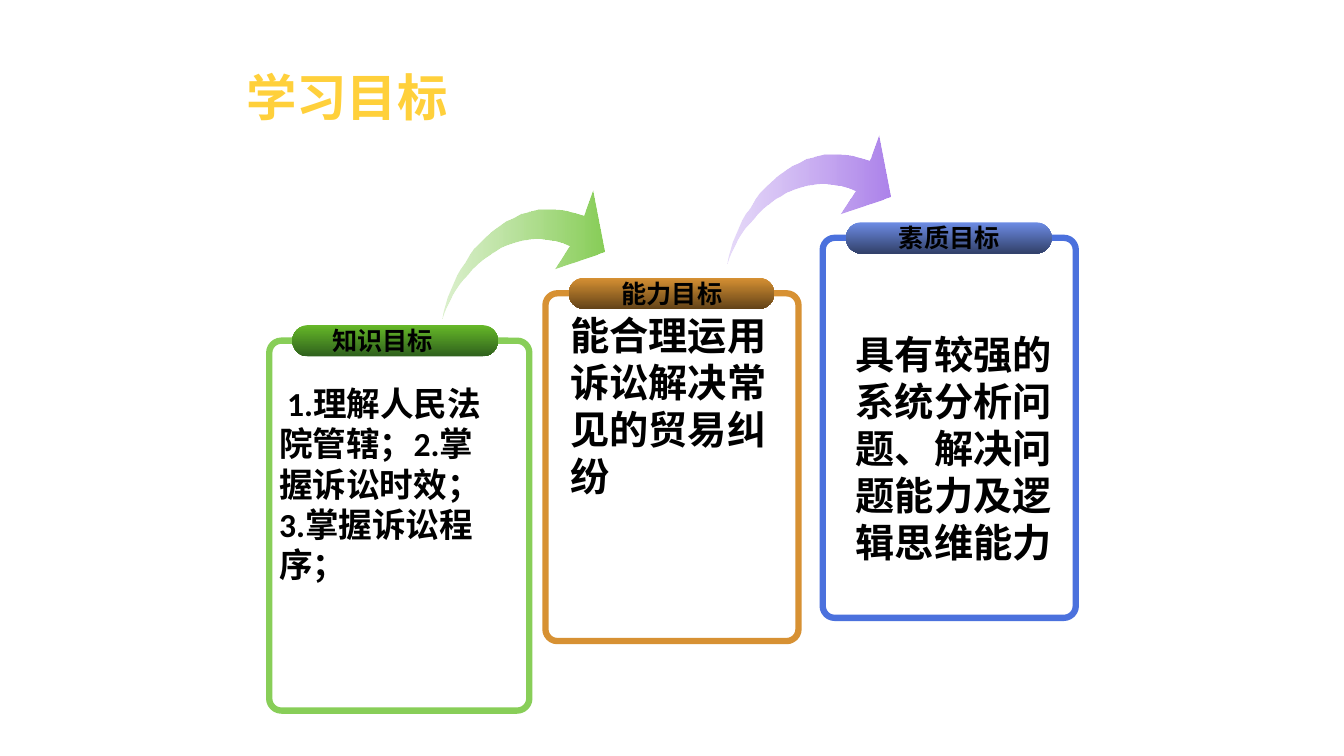
from collections import namedtuple

from lxml import etree
from pptx import Presentation
from pptx.dml.color import RGBColor
from pptx.enum import shapes, text
from pptx.oxml import ns
from pptx.util import Inches, Pt


def gradient(sp, start, end, angle):
    sp.shadow.inherit = False
    sp.line.fill.background()
    sp.fill.gradient()
    sp.fill.gradient_angle = angle
    for stop, color, position in zip(sp.fill.gradient_stops, (start, end), (0, 1)):
        stop.color.rgb = RGBColor.from_string(color)
        stop.position = position


def write(tf, words, size, color="000000", font="Calibri"):
    """Fill tf with one bold paragraph and return that paragraph."""
    tf.text = words
    p = tf.paragraphs[0]
    p.font.size, p.font.bold, p.font.name = Pt(size), True, font
    p.font.color.rgb = RGBColor.from_string(color)
    ea = etree.SubElement(p._p.pPr.find(ns.qn("a:defRPr")), ns.qn("a:ea"))
    ea.set("typeface", "Noto Sans CJK SC")
    return p


prs = Presentation()
prs.slide_width, prs.slide_height = Inches(13.33), Inches(7.5)
s = prs.slides.add_slide(prs.slide_layouts[5])

# Title
title = s.shapes.title
title.left, title.top = Inches(2.34), Inches(0.64)
title.width, title.height = Inches(8.66), Inches(0.71)
title.text_frame.vertical_anchor = text.MSO_ANCHOR.MIDDLE
p = write(title.text_frame, "学习目标", 36, "FFD03B", "Noto Sans CJK SC")
p.alignment = text.PP_ALIGN.LEFT
p.line_spacing = 0.9

# Cards: a frame, a pill on its top edge, a heading on the pill, a body inside.
# label_dx, body_dx and body_dy are measured from the frame's top left corner.
Card = namedtuple("Card", "heading x y width height color shades label_dx "
                          "body_dx body_dy body_height size indent body")
cards = [
    Card("知识目标", 2.67, 3.38, 2.58, 3.67, "88CE58", ("66B828", "2F611D"), 0.52,
         0, 0.37, 2.12, 24, 0.08, "1.理解人民法院管辖；2.掌握诉讼时效；3.掌握诉讼程序；"),
    Card("能力目标", 5.41, 2.91, 2.51, 3.45, "D79133", ("D79133", "634318"), 0.65,
         0.15, 0.13, 1.99, 28, 0, "能合理运用诉讼解决常见的贸易纠纷"),
    Card("素质目标", 8.16, 2.36, 2.51, 3.77, "4B71DD", ("6D8CE5", "32416A"), 0.65,
         0.23, 0.87, 2.9, 28, 0, "具有较强的系统分析问题、解决问题能力及逻辑思维能力"),
]
PILL_WIDTH, PILL_HEIGHT, PILL_DX = 2.04, 0.31, 0.23
LABEL_WIDTH, LABEL_HEIGHT = 1.21, 0.4
BODY_WIDTH = 2.27

for card in cards:
    frame = s.shapes.add_shape(shapes.MSO_SHAPE.ROUNDED_RECTANGLE, Inches(card.x),
                               Inches(card.y), Inches(card.width), Inches(card.height))
    frame.adjustments[0] = 0.047
    frame.shadow.inherit = False
    frame.fill.background()
    frame.line.color.rgb = RGBColor.from_string(card.color)
    frame.line.width = Pt(4.5)

    # Pill and heading are both centred on the frame's top edge
    pill = s.shapes.add_shape(shapes.MSO_SHAPE.ROUNDED_RECTANGLE, Inches(card.x + PILL_DX),
                              Inches(card.y - PILL_HEIGHT / 2),
                              Inches(PILL_WIDTH), Inches(PILL_HEIGHT))
    pill.adjustments[0] = 0.5
    gradient(pill, *card.shades, 270)

    label = s.shapes.add_textbox(Inches(card.x + card.label_dx),
                                 Inches(card.y - LABEL_HEIGHT / 2),
                                 Inches(LABEL_WIDTH), Inches(LABEL_HEIGHT))
    label.text_frame.word_wrap = False
    write(label.text_frame, card.heading, 18).alignment = text.PP_ALIGN.CENTER

    body = s.shapes.add_textbox(Inches(card.x + card.body_dx), Inches(card.y + card.body_dy),
                                Inches(BODY_WIDTH), Inches(card.body_height))
    body.text_frame.word_wrap = True
    p = write(body.text_frame, card.body, card.size)
    p._p.pPr.set("indent", str(Inches(card.indent)))

# Arrow: two cubic Bezier edges leave the tail and end at the head's three corners.
# Points are hundredths of an inch from the tail, with y pointing down.
TAIL = (0, 0)
INNER_EDGE = [TAIL, (12, -45), (70, -98), (126, -72)]
OUTER_EDGE = [TAIL, (8, -52), (62, -132), (140, -102)]
HEAD = [(111, -49), (161, -66), (149, -127)]
STEPS = 24

edges = []
for controls in (INNER_EDGE, OUTER_EDGE):
    edge = []
    for step in range(STEPS + 1):
        t = step / STEPS
        weights = ((1 - t) ** 3, 3 * t * (1 - t) ** 2, 3 * t ** 2 * (1 - t), t ** 3)
        edge.append([sum(w * c for w, c in zip(weights, axis)) for axis in zip(*controls)])
    edges.append(edge)
inner, outer = edges
outline = inner + HEAD + outer[:0:-1]  # out along one edge, back along the other

for tail_x, tail_y, start, end in [(439, 316, "93D267", "88CE58"),
                                   (722, 261, "B48EED", "AD83EB")]:
    points = [(tail_x + dx, tail_y + dy) for dx, dy in outline]
    builder = s.shapes.build_freeform(*points[0], scale=Inches(0.01))
    builder.add_line_segments(points[1:], close=True)
    arrow = builder.convert_to_shape()
    gradient(arrow, start, end, 0)
    tail_color = arrow._element.spPr.find(".//" + ns.qn("a:srgbClr"))
    etree.SubElement(tail_color, ns.qn("a:alpha")).set("val", "32000")

prs.save("out.pptx")
